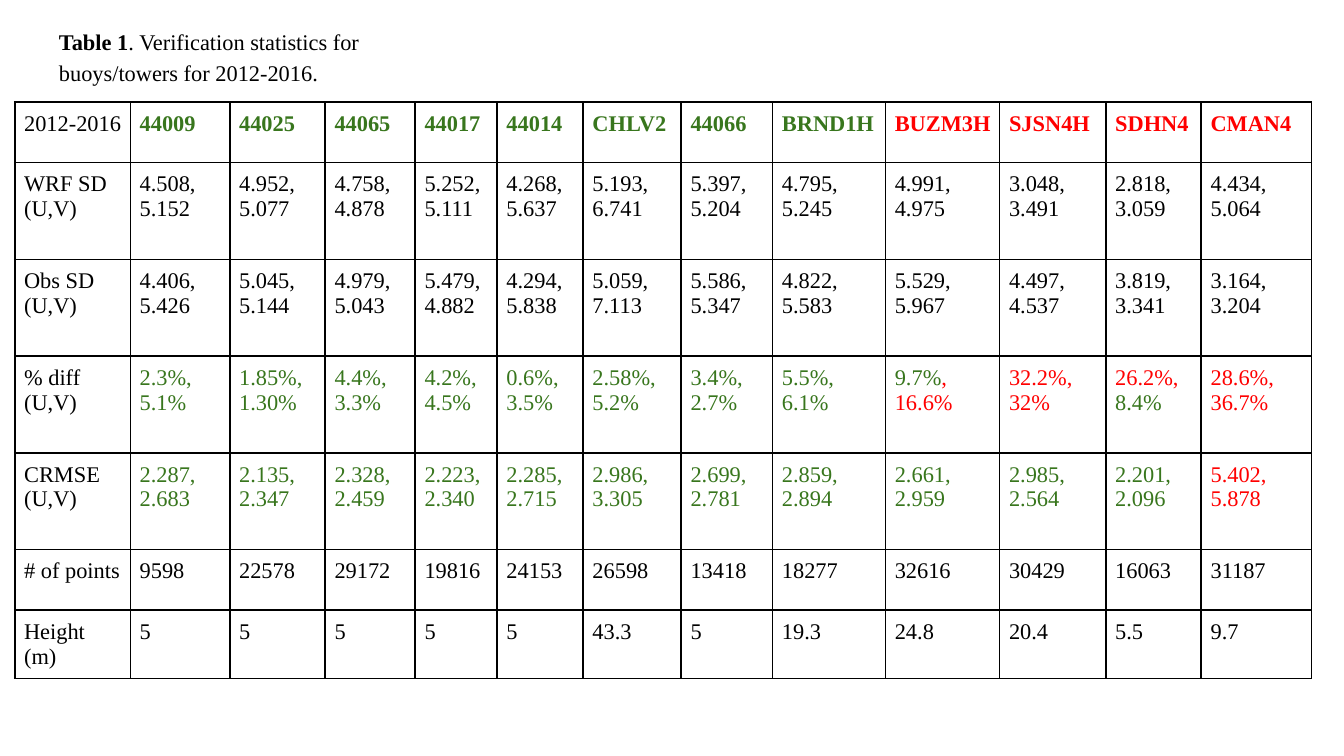
from dataclasses import dataclass

from lxml.etree import SubElement
from pptx import Presentation
from pptx.dml.color import RGBColor
from pptx.enum.text import MSO_ANCHOR
from pptx.oxml.ns import qn
from pptx.slide import Slide
from pptx.table import _Cell
from pptx.text.text import _Paragraph
from pptx.util import Inches, Pt

FONT = "Times New Roman"
COLORS = {"black": "000000", "green": "38761D", "red": "FF0000", "white": "FFFFFF"}
COLUMN_WIDTHS = [0.86, 0.74, 0.71, 0.67, 0.61, 0.64, 0.73, 0.68, 0.84, 0.85, 0.79, 0.71, 0.82]
LOW, HIGH = 0.45, 0.72


@dataclass
class Span:
    text: str
    color: str = "black"
    bold: bool = False


@dataclass
class Row:
    height: float
    label: str
    cells: list[list[Span]]


def colored(color: str, *texts: str, bold: bool = False) -> list[list[Span]]:
    return [[Span(text, color, bold)] for text in texts]


ROWS = [
    Row(LOW, "2012-2016",
        colored("green", "44009", "44025", "44065", "44017", "44014", "CHLV2", "44066", "BRND1H", bold=True)
        + colored("red", "BUZM3H", "SJSN4H", "SDHN4", "CMAN4", bold=True)),
    Row(HIGH, "WRF SD (U,V)",
        colored("black", "4.508, 5.152", "4.952, 5.077", "4.758, 4.878", "5.252, 5.111",
                "4.268, 5.637", "5.193, 6.741", "5.397, 5.204", "4.795, 5.245",
                "4.991, 4.975", "3.048, 3.491", "2.818, 3.059", "4.434, 5.064")),
    Row(HIGH, "Obs SD (U,V)",
        colored("black", "4.406, 5.426", "5.045, 5.144", "4.979, 5.043", "5.479, 4.882",
                "4.294, 5.838", "5.059, 7.113", "5.586, 5.347", "4.822, 5.583",
                "5.529, 5.967", "4.497, 4.537", "3.819, 3.341", "3.164, 3.204")),
    Row(HIGH, "% diff\n(U,V)",
        colored("green", "2.3%, 5.1%", "1.85%, 1.30%", "4.4%, 3.3%", "4.2%, 4.5%",
                "0.6%, 3.5%", "2.58%, 5.2%", "3.4%, 2.7%", "5.5%, 6.1%")
        + [[Span("9.7%", "green"), Span(", 16.6%", "red")],
           [Span("32.2%, 32%", "red")],
           [Span("26.2%, ", "red"), Span("8.4%", "green")],
           [Span("28.6%, 36.7%", "red")]]),
    Row(HIGH, "CRMSE (U,V)",
        colored("green", "2.287, 2.683", "2.135, 2.347", "2.328, 2.459", "2.223, 2.340",
                "2.285, 2.715", "2.986, 3.305", "2.699, 2.781", "2.859, 2.894",
                "2.661, 2.959", "2.985, 2.564", "2.201, 2.096")
        + colored("red", "5.402, 5.878")),
    Row(LOW, "# of points",
        colored("black", "9598", "22578", "29172", "19816", "24153", "26598",
                "13418", "18277", "32616", "30429", "16063", "31187")),
    Row(LOW, "Height (m)",
        colored("black", "5", "5", "5", "5", "5", "43.3", "5", "19.3", "24.8", "20.4", "5.5", "9.7")),
]


def write_spans(paragraph: _Paragraph, spans: list[Span]) -> None:
    paragraph.font.name = FONT
    paragraph.font.size = Pt(12)
    for span in spans:
        run = paragraph.add_run()
        run.text = span.text
        run.font.bold = span.bold
        run.font.color.rgb = RGBColor.from_string(COLORS[span.color])


def add_borders(cell: _Cell) -> None:
    properties = cell._tc.get_or_add_tcPr()
    for position, side in enumerate(("a:lnL", "a:lnR", "a:lnT", "a:lnB")):
        line = SubElement(properties, qn(side), w=str(Pt(1)))
        fill = SubElement(line, qn("a:solidFill"))
        SubElement(fill, qn("a:srgbClr"), val=COLORS["black"])
        properties.insert(position, line)


def fill_cell(cell: _Cell, paragraphs: list[list[Span]]) -> None:
    cell.margin_left = cell.margin_top = cell.margin_bottom = Inches(0.07)
    cell.margin_right = Inches(0.06)
    cell.fill.solid()
    cell.fill.fore_color.rgb = RGBColor.from_string(COLORS["white"])
    add_borders(cell)
    frame = cell.text_frame
    for index, spans in enumerate(paragraphs):
        write_spans(frame.add_paragraph() if index else frame.paragraphs[0], spans)


def add_statistics_table(page: Slide) -> None:
    table = page.shapes.add_table(
        len(ROWS), len(COLUMN_WIDTHS), Inches(0.11), Inches(0.76),
        Inches(sum(COLUMN_WIDTHS)), Inches(sum(row.height for row in ROWS))).table
    table.horz_banding = False
    table.first_row = False
    for column, width in zip(table.columns, COLUMN_WIDTHS):
        column.width = Inches(width)
    for index, row in enumerate(ROWS):
        table.rows[index].height = Inches(row.height)
        fill_cell(table.cell(index, 0), [[Span(line)] for line in row.label.split("\n")])
        for column, spans in enumerate(row.cells, start=1):
            fill_cell(table.cell(index, column), [spans])


def add_caption(page: Slide) -> None:
    box = page.shapes.add_textbox(Inches(0.34), Inches(-1.23), Inches(3.28), Inches(3.28))
    frame = box.text_frame
    frame.word_wrap = True
    frame.vertical_anchor = MSO_ANCHOR.MIDDLE
    frame.margin_left = frame.margin_right = Inches(0.1)
    frame.margin_top = frame.margin_bottom = Inches(0.1)
    paragraph = frame.paragraphs[0]
    paragraph.line_spacing = 1.15
    write_spans(paragraph, [
        Span("Table 1", bold=True),
        Span(". Verification statistics for buoys/towers for 2012-2016."),
    ])


def main() -> None:
    deck = Presentation()
    deck.slide_width = Inches(10)
    deck.slide_height = deck.slide_width * 9 // 16
    page = deck.slides.add_slide(deck.slide_layouts[6])
    add_statistics_table(page)
    add_caption(page)
    deck.save("out.pptx")


if __name__ == "__main__":
    main()
